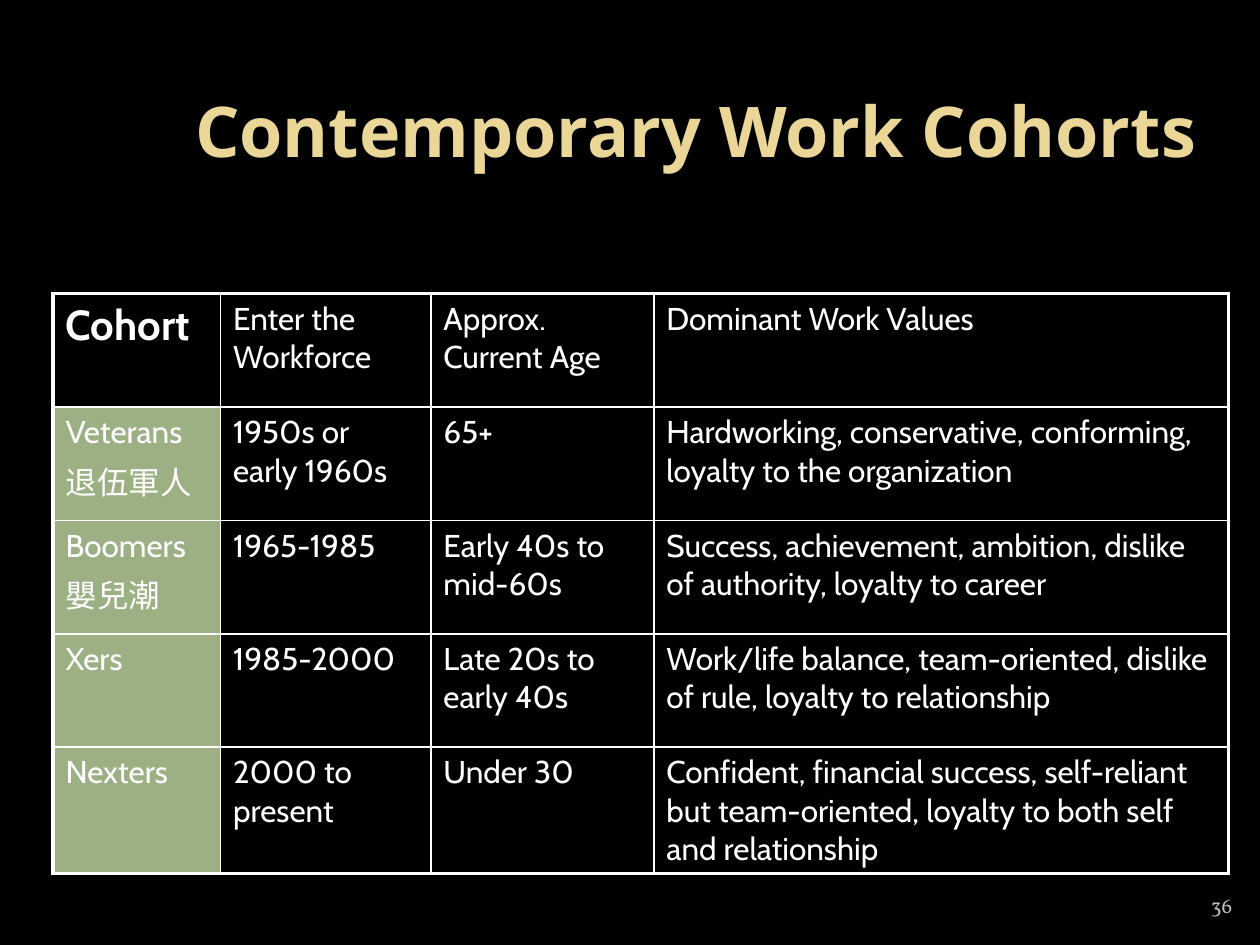
"""Build the Contemporary Work Cohorts slide."""
from lxml import etree
from pptx import Presentation
from pptx import util as u
from pptx.dml.color import RGBColor
from pptx.enum import text
from pptx.oxml import ns

TITLE = "Contemporary Work Cohorts"
PAGE_NUMBER = "36"
ROWS = [
    ("Cohort", "Enter the Workforce", "Approx. Current Age", "Dominant Work Values"),
    ("Veterans\n退伍軍人", "1950s or early 1960s", "65+",
     "Hardworking, conservative, conforming, loyalty to the organization"),
    ("Boomers\n嬰兒潮", "1965-1985", "Early 40s to mid-60s",
     "Success, achievement, ambition, dislike of authority, loyalty to career"),
    ("Xers", "1985-2000", "Late 20s to early 40s",
     "Work/life balance, team-oriented, dislike of rule, loyalty to relationship"),
    ("Nexters", "2000 to present", "Under 30",
     "Confident, financial success, self-reliant but team-oriented, "
     "loyalty to both self and relationship"),
]
COLUMN_WIDTHS = [1.33, 1.67, 1.77, 4.56]
ROW_HEIGHT = 0.9
BLACK, WHITE, GREEN, GOLD, GREY = "000000", "FFFFFF", "9CB084", "EAD696", "BDBDBD"
OUTER, INNER = 2.25, 1


def paint(fill, color):
    fill.solid()
    fill.fore_color.rgb = RGBColor.from_string(color)


def style(para, name, size, color, bold=False):
    para.font.name = name
    para.font.size = u.Pt(size)
    para.font.bold = bold
    para.font.color.rgb = RGBColor.from_string(color)


def place(shape, left, top, width, height):
    shape.left, shape.top = u.Inches(left), u.Inches(top)
    shape.width, shape.height = u.Inches(width), u.Inches(height)


def set_borders(cell, widths):
    properties = cell._tc.get_or_add_tcPr()
    for index, (side, width) in enumerate(widths.items()):
        line = etree.Element(ns.qn(f"a:ln{side}"), w=str(u.Pt(width)))
        fill = etree.SubElement(line, ns.qn("a:solidFill"))
        etree.SubElement(fill, ns.qn("a:srgbClr"), val=WHITE)
        properties.insert(index, line)


def add_title(page):
    title = page.shapes.title
    place(title, 1.26, 0.23, 8.52, 1.6)
    frame = title.text_frame
    frame.text = TITLE
    frame.vertical_anchor = text.MSO_ANCHOR.MIDDLE
    para = frame.paragraphs[0]
    para.alignment = text.PP_ALIGN.CENTER
    style(para, "Open Sans", 40, GOLD, bold=True)


def add_page_number(page):
    box = page.shapes.add_textbox(0, 0, 0, 0)
    place(box, 7.7, 6.83, 2.08, 0.5)
    frame = box.text_frame
    frame.word_wrap = True
    frame.margin_left = frame.margin_right = 0
    frame.vertical_anchor = text.MSO_ANCHOR.BOTTOM
    para = frame.paragraphs[0]
    para.text = PAGE_NUMBER
    para.alignment = text.PP_ALIGN.RIGHT
    style(para, "Vollkorn", 12, GREY)


def add_cohort_table(page):
    row_count, column_count = len(ROWS), len(COLUMN_WIDTHS)
    table = page.shapes.add_table(
        row_count, column_count, u.Inches(0.42), u.Inches(2.33),
        u.Inches(sum(COLUMN_WIDTHS)), u.Inches(ROW_HEIGHT * row_count)).table
    for column, width in zip(table.columns, COLUMN_WIDTHS):
        column.width = u.Inches(width)
    for r, row in enumerate(ROWS):
        table.rows[r].height = u.Inches(ROW_HEIGHT)
        for c, words in enumerate(row):
            cell = table.cell(r, c)
            cell.text = words
            is_corner = r == c == 0
            size = 24 if is_corner else 18
            for para in cell.text_frame.paragraphs:
                style(para, "Cabin", size, WHITE, bold=is_corner)
                para.space_before = u.Pt(size * 0.2)
            if c == 0 and r > 0:
                paint(cell.fill, GREEN)
            else:
                cell.fill.background()
            set_borders(cell, {
                "L": OUTER if c == 0 else INNER,
                "R": OUTER if c == column_count - 1 else INNER,
                "T": OUTER if r == 0 else INNER,
                "B": OUTER if r == row_count - 1 else INNER,
            })


def main():
    deck = Presentation()
    deck.slide_width, deck.slide_height = u.Inches(10), u.Inches(7.5)
    page = deck.slides.add_slide(deck.slide_layouts[5])
    paint(page.background.fill, BLACK)
    add_page_number(page)
    add_title(page)
    add_cohort_table(page)
    deck.save("out.pptx")


if __name__ == "__main__":
    main()
